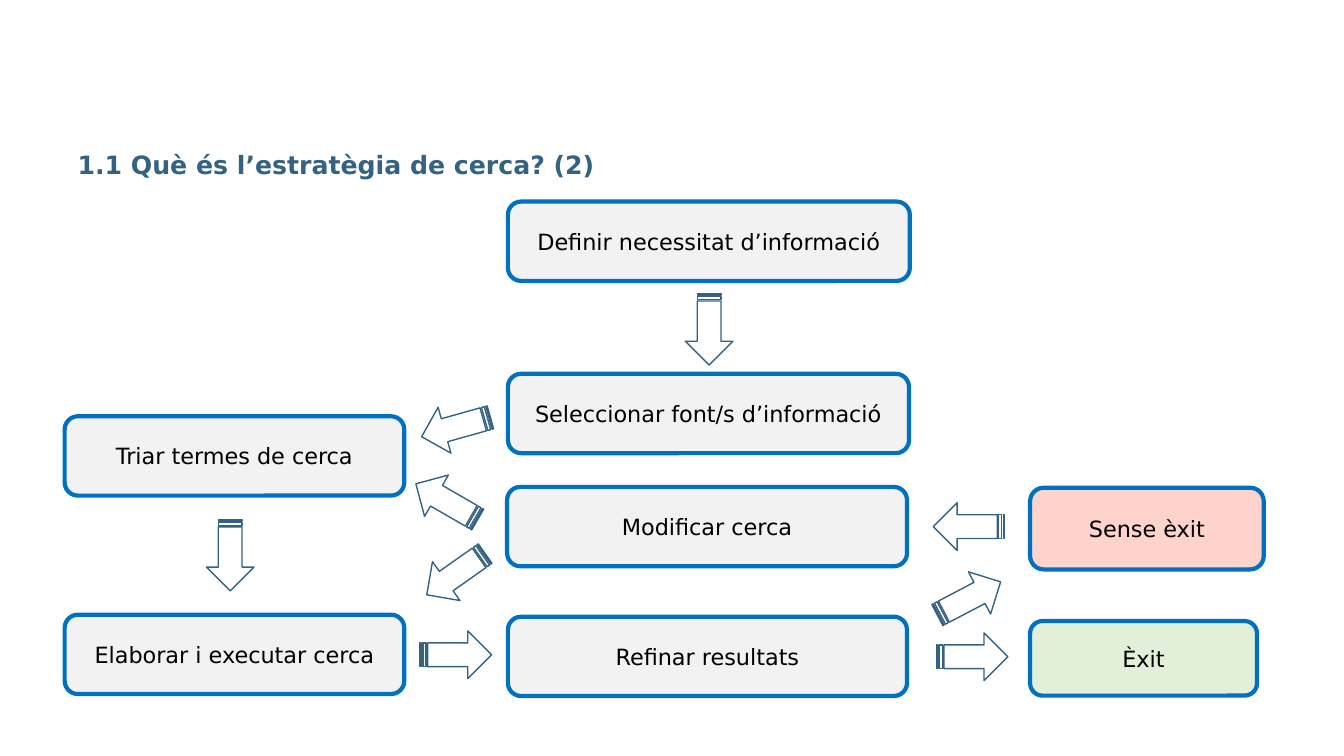
"""Build a slide with the flowchart of a search strategy."""
from pptx import Presentation
from pptx.dml.color import RGBColor
from pptx.enum.shapes import MSO_SHAPE
from pptx.enum.text import MSO_ANCHOR, MSO_AUTO_SIZE, PP_ALIGN
from pptx.util import Cm, Pt

BLUE, SLATE, GREY = "0070C0", "346283", "F2F2F2"
RED, GREEN, WHITE, BLACK = "FED3CC", "E2F0D9", "FFFFFF", "000000"


def paint(color_format, hex_color):
    color_format.rgb = RGBColor.from_string(hex_color)


def write_text(shape, text, size=16, color=BLACK, bold=False,
               align=PP_ALIGN.CENTER, anchor=MSO_ANCHOR.MIDDLE):
    frame = shape.text_frame
    frame.text = text
    frame.word_wrap = True
    frame.auto_size = MSO_AUTO_SIZE.NONE
    frame.vertical_anchor = anchor
    paragraph = frame.paragraphs[0]
    paragraph.alignment = align
    font = paragraph.runs[0].font
    font.name = "DejaVu Sans"
    font.size = Pt(size)
    font.bold = bold
    paint(font.color, color)


presentation = Presentation()
presentation.slide_width = Cm(33.87)
presentation.slide_height = Cm(19.05)
slide = presentation.slides.add_slide(presentation.slide_layouts[5])

title = slide.shapes.title
title.left, title.top, title.width, title.height = Cm(1.7), Cm(3.63), Cm(21.82), Cm(2.18)
write_text(title, "1.1 Què és l’estratègia de cerca? (2)", size=18, color=SLATE,
           bold=True, align=PP_ALIGN.LEFT, anchor=MSO_ANCHOR.TOP)

steps = [
    ("Definir necessitat d’informació", 12.8, 5.08, 10.13, 2, GREY),
    ("Seleccionar font/s d’informació", 12.8, 9.42, 10.11, 2, GREY),
    ("Triar termes de cerca", 1.63, 10.49, 8.56, 2, GREY),
    ("Elaborar i executar cerca", 1.63, 15.49, 8.56, 2, GREY),
    ("Modificar cerca", 12.78, 12.27, 10.08, 2, GREY),
    ("Refinar resultats", 12.8, 15.54, 10.06, 2, GREY),
    ("Sense èxit", 25.96, 12.29, 5.89, 2.06, RED),
    ("Èxit", 25.96, 15.65, 5.72, 1.88, GREEN),
]
for text, left, top, width, height, fill in steps:
    step = slide.shapes.add_shape(MSO_SHAPE.ROUNDED_RECTANGLE,
                                  Cm(left), Cm(top), Cm(width), Cm(height))
    step.shadow.inherit = False
    step.fill.solid()
    paint(step.fill.fore_color, fill)
    paint(step.line.color, BLUE)
    step.line.width = Pt(3)
    write_text(step, text)

arrows = [
    (16.97, 7.7, 90),
    (10.59, 10.16, 164.3),
    (10.36, 12.04, 210),
    (10.59, 13.87, 144.8),
    (4.9, 13.39, 90),
    (10.59, 15.9, 0),
    (23.6, 15.95, 0),
    (23.52, 14.48, 332.3),
    (23.52, 12.67, 180),
]
for left, top, rotation in arrows:
    arrow = slide.shapes.add_shape(MSO_SHAPE.STRIPED_RIGHT_ARROW,
                                   Cm(left), Cm(top), Cm(1.8), Cm(1.2))
    arrow.rotation = rotation
    arrow.shadow.inherit = False
    arrow.fill.solid()
    paint(arrow.fill.fore_color, WHITE)
    paint(arrow.line.color, SLATE)
    arrow.line.width = Pt(1)

presentation.save("out.pptx")
